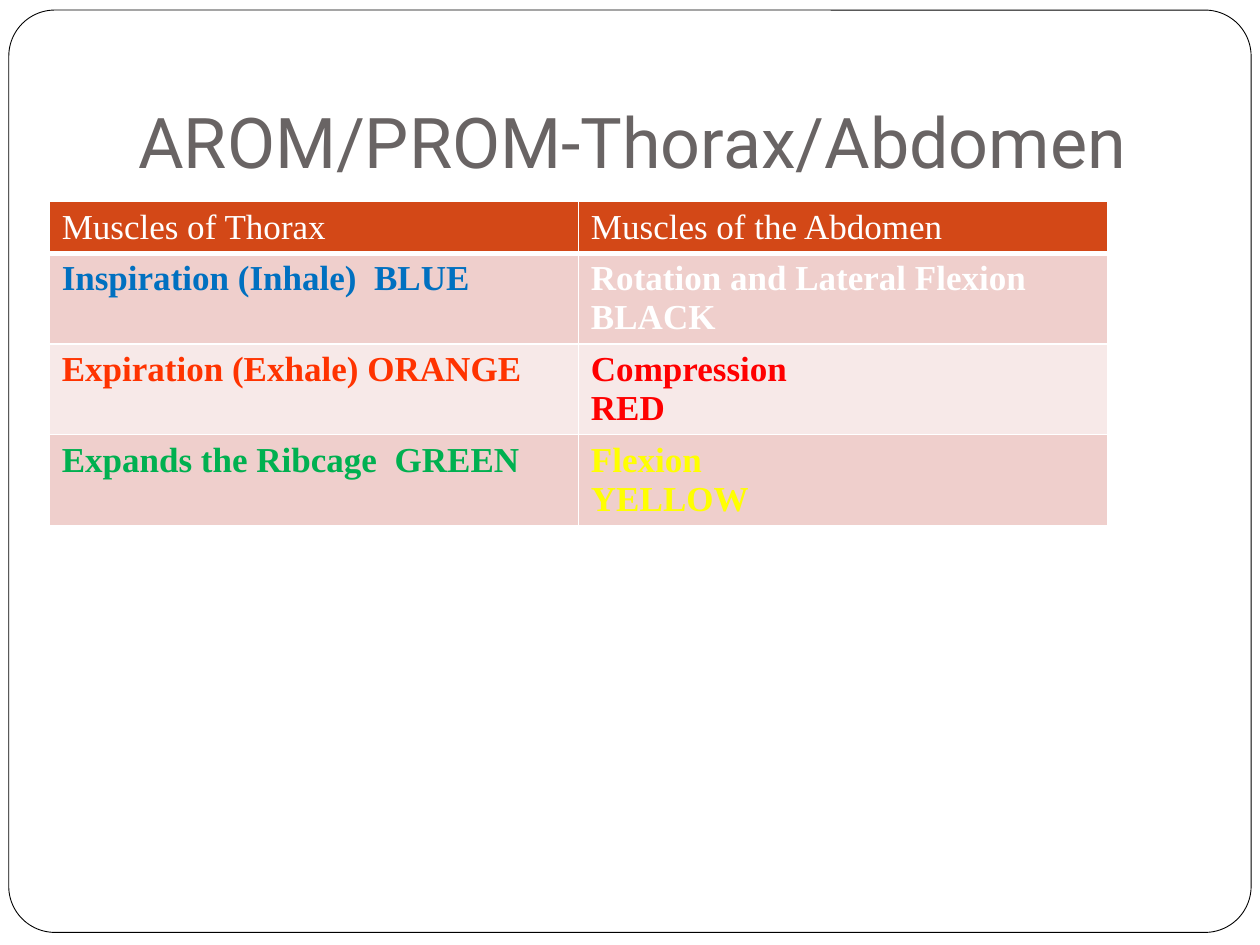
from dataclasses import dataclass

from lxml import etree
from pptx import Presentation
from pptx.dml.color import RGBColor
from pptx.enum.shapes import MSO_SHAPE
from pptx.enum.text import MSO_ANCHOR, PP_ALIGN
from pptx.oxml.ns import qn
from pptx.util import Inches, Pt

ROUNDED = MSO_SHAPE.ROUNDED_RECTANGLE
BOTTOM = MSO_ANCHOR.BOTTOM
LEFT = PP_ALIGN.LEFT


@dataclass(frozen=True)
class Theme:
    title_font: str = "Roboto"
    table_font: str = "Times New Roman"
    title_size: int = 40
    table_size: int = 20
    title: str = "696464"
    white: str = "FFFFFF"
    frame: str = "000000"
    header: str = "D34817"
    bands: tuple = ("EFCFCC", "F7E9E8")


THEME = Theme()
SLIDE_WIDTH, SLIDE_HEIGHT = 10, 7.5
COLUMN_WIDTH = 4.2
HEADER_HEIGHT, BODY_HEIGHT = 0.41, 0.72

HEADINGS = ("Muscles of Thorax", "Muscles of the Abdomen")
# Each row: (text, colour) for the thorax and for the abdomen
MUSCLE_ROWS = (
    (("Inspiration (Inhale)  BLUE", "0070C0"),
     ("Rotation and Lateral Flexion BLACK", THEME.white)),
    (("Expiration (Exhale) ORANGE", "FF3300"),
     ("Compression\nRED", "FF0000")),
    (("Expands the Ribcage  GREEN", "00B050"),
     ("Flexion\nYELLOW", "FFFF00")),
)


def color(value):
    return RGBColor.from_string(value)


def write_text(text_frame, text, font_name, size, text_color, bold=False):
    text_frame.text = text
    for paragraph in text_frame.paragraphs:
        paragraph.alignment = LEFT
        for run in paragraph.runs:
            run.font.name = font_name
            run.font.size = Pt(size)
            run.font.bold = bold
            run.font.color.rgb = color(text_color)


def add_frame(slide):
    frame = slide.shapes.add_shape(
        ROUNDED, Inches(0.07), Inches(0.08), Inches(9.86), Inches(7.32))
    frame.adjustments[0] = 0.05
    frame.shadow.inherit = False
    frame.fill.solid()
    frame.fill.fore_color.rgb = color(THEME.white)
    frame.line.color.rgb = color(THEME.frame)
    frame.line.width = Pt(0.5)


def add_title(slide, text):
    box = slide.shapes.add_textbox(
        Inches(1), Inches(0.3), Inches(8.5), Inches(1.25))
    text_frame = box.text_frame
    text_frame.word_wrap = True
    text_frame.vertical_anchor = BOTTOM
    text_frame.margin_bottom = Inches(0.1)
    write_text(text_frame, text, THEME.title_font, THEME.title_size, THEME.title)


def set_borders(cell, bottom_width):
    """Draw white rules; they must come before the fill in the cell's XML."""
    properties = cell._tc.get_or_add_tcPr()
    widths = {"a:lnL": 1, "a:lnR": 1, "a:lnT": 1, "a:lnB": bottom_width}
    for tag, width in widths.items():
        line = etree.SubElement(properties, qn(tag), w=str(Pt(width)))
        fill = etree.SubElement(line, qn("a:solidFill"))
        etree.SubElement(fill, qn("a:srgbClr"), val=THEME.white)


def format_cell(cell, text, text_color, fill_color, is_header):
    set_borders(cell, bottom_width=3 if is_header else 1)
    cell.fill.solid()
    cell.fill.fore_color.rgb = color(fill_color)
    write_text(cell.text_frame, text, THEME.table_font, THEME.table_size,
               text_color, bold=not is_header)


def add_muscle_table(slide):
    header = tuple((heading, THEME.white) for heading in HEADINGS)
    rows = (header, *MUSCLE_ROWS)
    height = HEADER_HEIGHT + BODY_HEIGHT * len(MUSCLE_ROWS)
    table = slide.shapes.add_table(
        len(rows), len(HEADINGS), Inches(0.39), Inches(1.6),
        Inches(COLUMN_WIDTH * len(HEADINGS)), Inches(height)).table
    for row_index, row in enumerate(rows):
        is_header = row_index == 0
        table.rows[row_index].height = Inches(
            HEADER_HEIGHT if is_header else BODY_HEIGHT)
        band = THEME.bands[(row_index - 1) % len(THEME.bands)]
        fill_color = THEME.header if is_header else band
        for column_index, (text, text_color) in enumerate(row):
            format_cell(table.cell(row_index, column_index), text, text_color,
                        fill_color, is_header)


def main():
    presentation = Presentation()
    presentation.slide_width = Inches(SLIDE_WIDTH)
    presentation.slide_height = Inches(SLIDE_HEIGHT)
    slide = presentation.slides.add_slide(presentation.slide_layouts[6])
    add_frame(slide)
    add_muscle_table(slide)
    add_title(slide, "AROM/PROM-Thorax/Abdomen")
    presentation.save("out.pptx")


if __name__ == "__main__":
    main()
